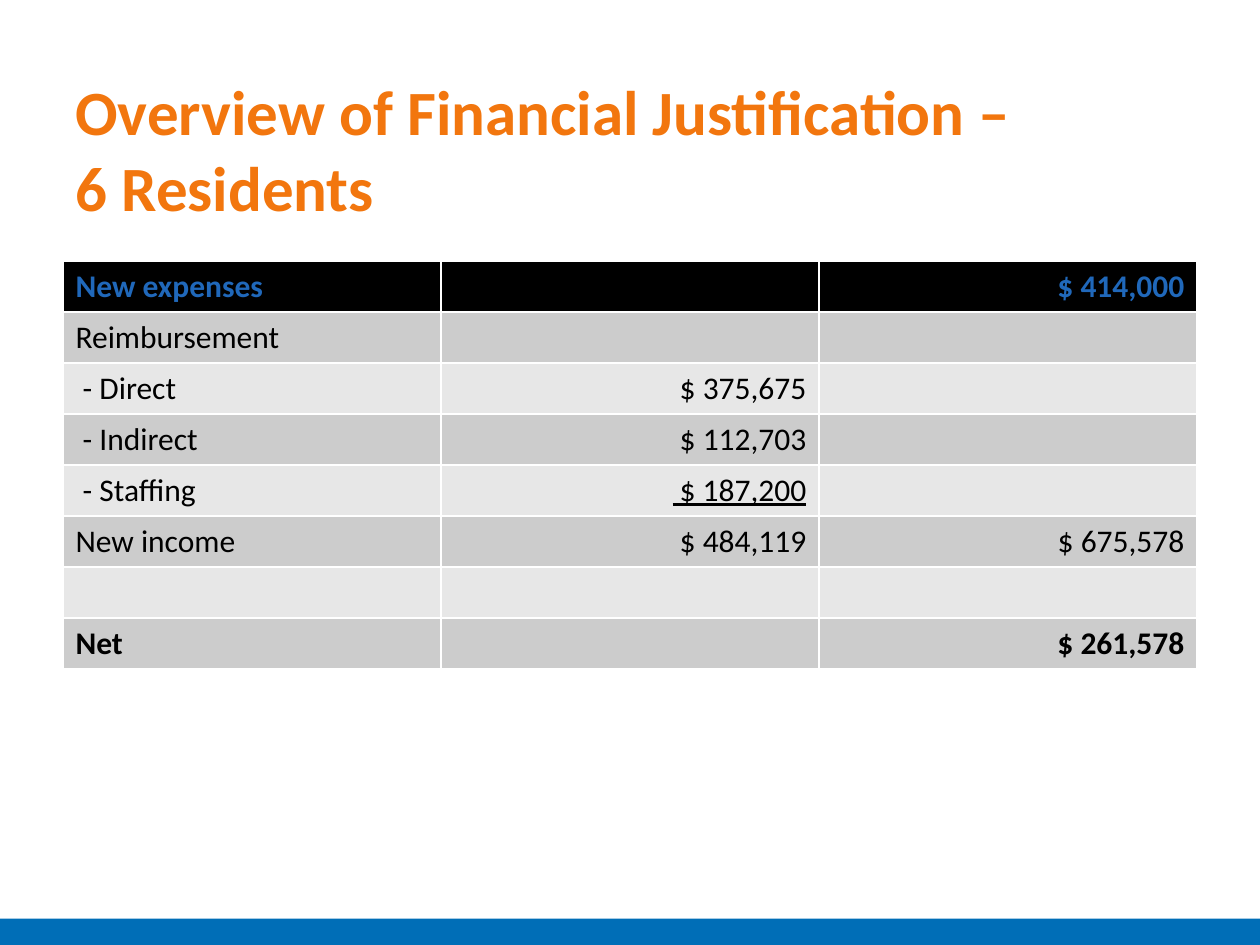
"""Build a slide with a table of costs and income for six residents."""
import dataclasses
import pptx
import pptx.dml.color
import pptx.enum.shapes
import pptx.enum.text
import pptx.util

Inches = pptx.util.Inches
Align = pptx.enum.text.PP_ALIGN


@dataclasses.dataclass(frozen=True)
class Theme:
    font: str = "Calibri"
    title: str = "F2760E"
    head: str = "2068BA"
    text: str = "000000"
    top: str = "000000"
    bands: tuple = ("E7E7E7", "CCCCCC")
    bar: str = "006EB7"
    large: int = 36
    body: int = 18


THEME = Theme()
ROWS = [
    ("New expenses", "", "$ 414,000"),
    ("Reimbursement", "", ""),
    (" - Direct", "$ 375,675", ""),
    (" - Indirect", "$ 112,703", ""),
    (" - Staffing", " $ 187,200", ""),
    ("New income", "$ 484,119", "$ 675,578"),
    ("", "", ""),
    ("Net", "", "$ 261,578"),
]
SUMMED = (4, 1)


def paint(fill, color):
    fill.solid()
    fill.fore_color.rgb = pptx.dml.color.RGBColor.from_string(color)


def style(para, size, color, bold):
    font = para.font
    font.name = THEME.font
    font.size = pptx.util.Pt(size)
    font.bold = bold
    font.color.rgb = pptx.dml.color.RGBColor.from_string(color)


def add_bar(slide):
    kind = pptx.enum.shapes.MSO_SHAPE.RECTANGLE
    bar = slide.shapes.add_shape(
        kind, 0, Inches(7.29), Inches(10), Inches(0.21))
    bar.shadow.inherit = False
    paint(bar.fill, THEME.bar)
    bar.line.fill.background()


def add_title(slide, text):
    box = slide.shapes.add_textbox(
        Inches(0.5), Inches(0.53), Inches(9), Inches(1.32))
    frame = box.text_frame
    frame.word_wrap = True
    frame.text = text
    style(frame.paragraphs[0], THEME.large, THEME.title, True)


def fill_cell(cell, text, row, col):
    head = row == 0
    paint(cell.fill, THEME.top if head else THEME.bands[row % 2])
    cell.text = text
    para = cell.text_frame.paragraphs[0]
    para.alignment = Align.RIGHT if col else Align.LEFT
    bold = row in (0, len(ROWS) - 1)
    style(para, THEME.body, THEME.head if head else THEME.text, bold)
    if (row, col) == SUMMED:
        para.font.underline = True


def add_grid(slide):
    frame = slide.shapes.add_table(
        len(ROWS), len(ROWS[0]),
        Inches(0.5), Inches(2.07), Inches(9), Inches(3.24))
    for row, texts in enumerate(ROWS):
        for col, text in enumerate(texts):
            fill_cell(frame.table.cell(row, col), text, row, col)


def main():
    deck = pptx.Presentation()
    deck.slide_width, deck.slide_height = Inches(10), Inches(7.5)
    slide = deck.slides.add_slide(deck.slide_layouts[6])
    add_bar(slide)
    add_title(slide, "Overview of Financial Justification – \v6 Residents")
    add_grid(slide)
    deck.save("out.pptx")


if __name__ == "__main__":
    main()
